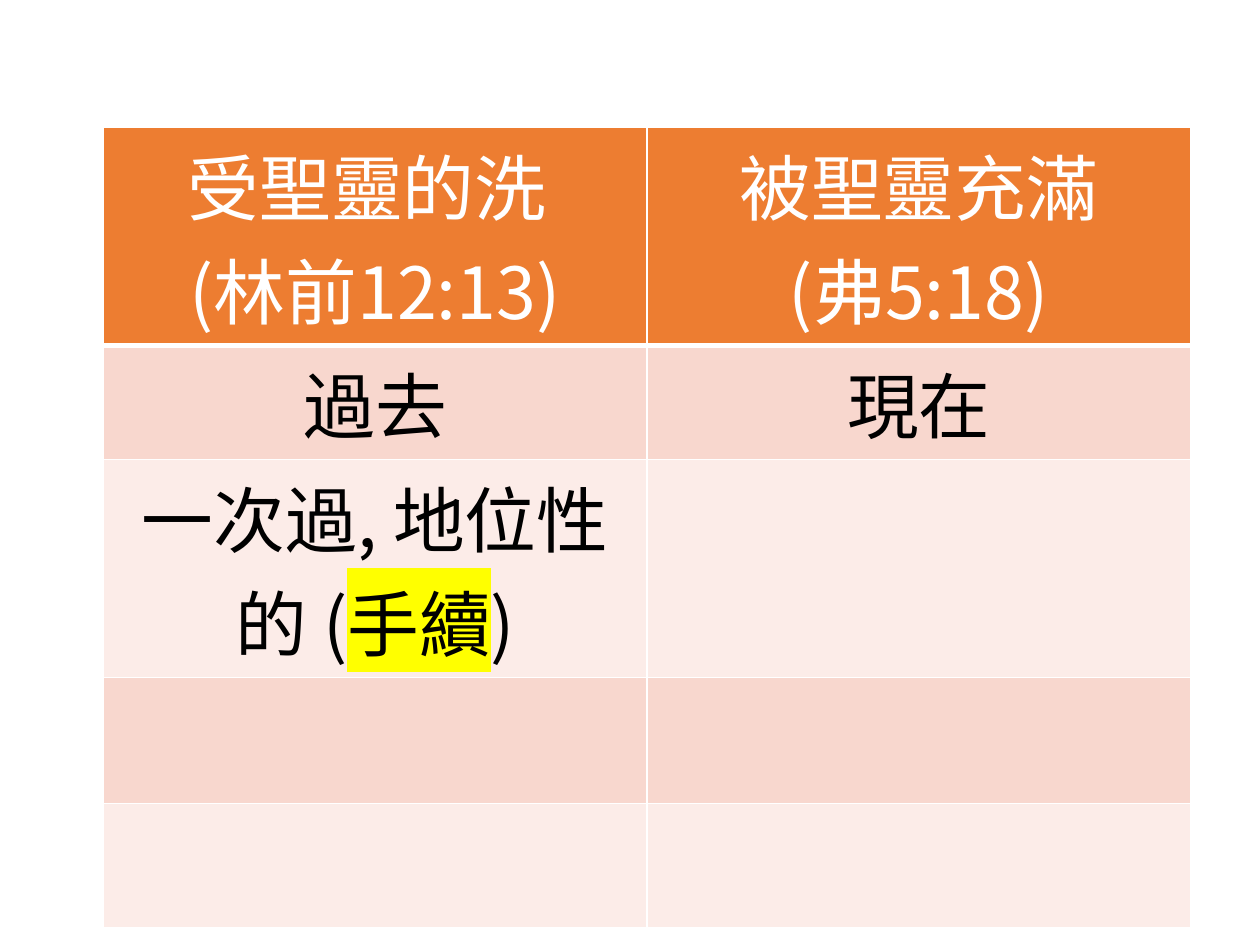
from lxml import etree
from pptx import Presentation
from pptx.dml.color import RGBColor
from pptx.enum.text import PP_ALIGN
from pptx.oxml.ns import qn
from pptx.util import Inches, Pt

CENTER = PP_ALIGN.CENTER
WHITE = RGBColor(0xFF, 0xFF, 0xFF)
BLACK = RGBColor(0x00, 0x00, 0x00)
ORANGE = RGBColor(0xED, 0x7D, 0x31)
ROSE = RGBColor(0xF8, 0xD7, 0xCE)
BLUSH = RGBColor(0xFC, 0xEC, 0xE8)
YELLOW = RGBColor(0xFF, 0xFF, 0x00)
FONT = "Noto Sans CJK JP"
MARKED = "手續"

ROW_HEIGHTS = [1.43, 0.75, 1.43, 1, 0.99]
COMPARISON = [
    [[["受聖靈的洗 "], ["(林前12:13)"]], [["被聖靈充滿"], ["(弗5:18)"]]],
    [[["過去"]], [["現在"]]],
    [[["一次過, 地位性的 (", MARKED, ")"]], []],
    [[], []],
    [[], []],
]


def add_color(parent, tag, color):
    """Append a colour element of the given tag."""
    holder = etree.SubElement(parent, qn(tag))
    etree.SubElement(holder, qn("a:srgbClr"), val=str(color))


def set_borders(cell, bottom_width):
    """Draw white borders around a cell."""
    properties = cell._tc.get_or_add_tcPr()
    widths = {"a:lnL": 1, "a:lnR": 1, "a:lnT": 1, "a:lnB": bottom_width}
    for position, (side, width) in enumerate(widths.items()):
        border = etree.Element(qn(side), w=str(Pt(width)))
        add_color(border, "a:solidFill", WHITE)
        properties.insert(position, border)


def write_line(paragraph, pieces, color):
    """Write one centred line and highlight its marked word."""
    paragraph.alignment = CENTER
    font = paragraph.font
    font.size = Pt(41)
    font.color.rgb = color
    font.name = FONT
    etree.SubElement(font._element, qn("a:ea"), typeface=FONT)
    for piece in pieces:
        run = paragraph.add_run()
        run.text = piece
        run.font.language_id = None
        if piece == MARKED:
            add_color(run.font._element, "a:highlight", YELLOW)


def fill_cell(cell, lines, row):
    """Style one cell by its row and write its lines."""
    header = row == 0
    cell.fill.solid()
    cell.fill.fore_color.rgb = ORANGE if header else (BLUSH, ROSE)[row % 2]
    set_borders(cell, 3 if header else 1)
    cell.margin_left = cell.margin_right = Inches(0.07)
    cell.margin_top = cell.margin_bottom = Inches(0.04)
    frame = cell.text_frame
    for index, pieces in enumerate(lines):
        paragraph = frame.add_paragraph() if index else frame.paragraphs[0]
        write_line(paragraph, pieces, WHITE if header else BLACK)


def add_comparison(slide, left, top, width, height):
    """Place the two-column comparison table in the given box."""
    table = slide.shapes.add_table(
        len(COMPARISON), 2, left, top, width, height).table
    for row, (row_height, cells) in enumerate(zip(ROW_HEIGHTS, COMPARISON)):
        table.rows[row].height = Inches(row_height)
        for column, lines in enumerate(cells):
            fill_cell(table.cell(row, column), lines, row)


def main():
    """Build and save the slide."""
    deck = Presentation()
    deck.slide_width, deck.slide_height = Inches(10), Inches(7.5)
    slide = deck.slides.add_slide(deck.slide_layouts[6])
    add_comparison(slide, Inches(0.82), Inches(1.01), Inches(8.63), Inches(5.6))
    deck.save("out.pptx")


if __name__ == "__main__":
    main()
